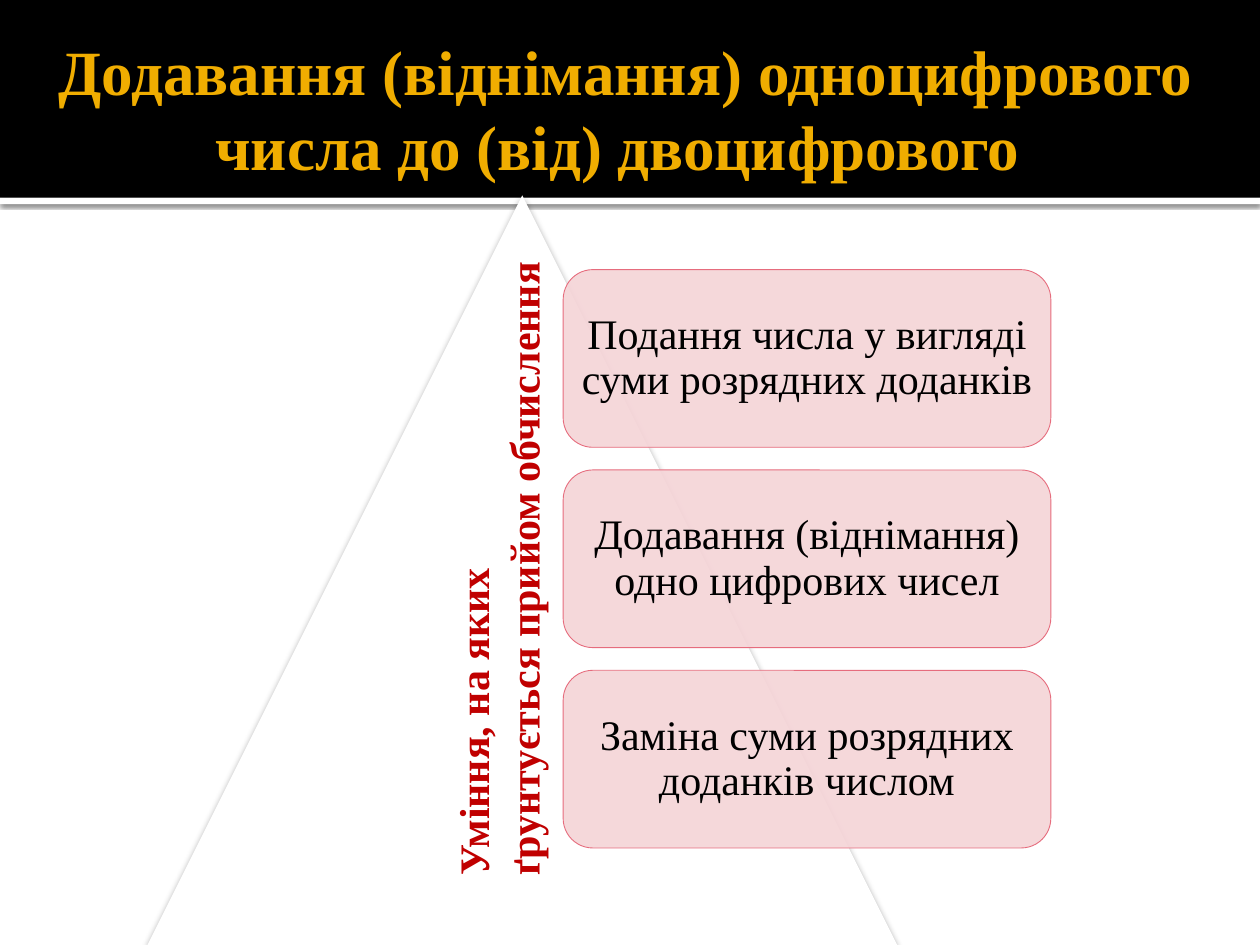
from dataclasses import dataclass
from typing import Optional

from lxml.etree import SubElement
from pptx import Presentation
from pptx.dml.color import RGBColor
from pptx.enum.shapes import MSO_SHAPE
from pptx.enum.text import MSO_ANCHOR, PP_ALIGN
from pptx.oxml.ns import qn
from pptx.util import Inches, Pt

COLORS = {
    "white": "FFFFFF",
    "black": "000000",
    "gold": "F0AD00",
    "pink": "F5D4D7",
    "rose": "E66C7D",
    "red": "C00000",
}
FONT = "Times New Roman"


@dataclass
class Shadow:
    alpha: int
    blur: float
    dist: float


@dataclass
class Box:
    x: float
    y: float
    w: float
    h: float
    fill: str
    kind: MSO_SHAPE = MSO_SHAPE.RECTANGLE
    line: Optional[str] = None
    alpha: Optional[int] = None
    shadow: Optional[Shadow] = None


def rgb(name: str) -> RGBColor:
    return RGBColor.from_string(COLORS[name])


def add_alpha(clr, percent: int) -> None:
    SubElement(clr, qn("a:alpha"), val=str(percent * 1000))


def add_box(s, b: Box):
    sp = s.shapes.add_shape(b.kind, Inches(b.x), Inches(b.y), Inches(b.w), Inches(b.h))
    sp.shadow.inherit = False
    sp.fill.solid()
    sp.fill.fore_color.rgb = rgb(b.fill)
    if b.alpha:
        add_alpha(sp.element.spPr.find(".//" + qn("a:srgbClr")), b.alpha)
    if b.line:
        sp.line.color.rgb = rgb(b.line)
        sp.line.width = Pt(0.5)
    else:
        sp.line.fill.background()
    if b.shadow:
        effects = sp.element.spPr.find(qn("a:effectLst"))
        outer = SubElement(
            effects, qn("a:outerShdw"), blurRad=str(Pt(b.shadow.blur)),
            dist=str(Pt(b.shadow.dist)), dir="5400000", algn="t", rotWithShape="0",
        )
        add_alpha(SubElement(outer, qn("a:srgbClr"), val=COLORS["black"]), b.shadow.alpha)
    return sp


def add_textbox(s, x: float, y: float, w: float, h: float):
    return s.shapes.add_textbox(Inches(x), Inches(y), Inches(w), Inches(h))


def set_text(sp, lines: list[str], color: str, font: dict, frame: dict, para: dict) -> None:
    tf = sp.text_frame
    for name, value in {"word_wrap": True, **frame}.items():
        setattr(tf, name, value)
    for i, line in enumerate(lines):
        p = tf.add_paragraph() if i else tf.paragraphs[0]
        for name, value in para.items():
            setattr(p, name, value)
        r = p.add_run()
        r.text = line
        for name, value in {"name": FONT, **font}.items():
            setattr(r.font, name, value)
        r.font.color.rgb = rgb(color)


def main() -> None:
    prs = Presentation()
    prs.slide_width, prs.slide_height = Inches(10), Inches(7.5)
    s = prs.slides.add_slide(prs.slide_layouts[6])

    add_box(s, Box(0, 1.57, 10, 0.05, "white", shadow=Shadow(60, 2.5, 0.8)))
    add_box(s, Box(0, 0, 10, 1.57, "black"))

    title = add_textbox(s, 0.19, 0.17, 9.5, 1.37)
    set_text(
        title, ["Додавання (віднімання) одноцифрового числа до (від) двоцифрового "], "gold",
        {"size": Pt(36), "bold": True},
        {"vertical_anchor": MSO_ANCHOR.MIDDLE, "margin_right": Inches(0.05)},
        {"alignment": PP_ALIGN.CENTER},
    )

    add_box(s, Box(1.17, 1.55, 5.95, 5.95, "white", MSO_SHAPE.ISOSCELES_TRIANGLE,
                   shadow=Shadow(38, 3.5, 2)))

    skills = [
        "Подання числа у вигляді суми розрядних доданків",
        "Додавання (віднімання) одно цифрових чисел",
        "Заміна суми розрядних доданків числом",
    ]
    margins = {f"margin_{side}": Inches(0.03) for side in ("left", "top", "right", "bottom")}
    for i, skill in enumerate(skills):
        card = add_box(s, Box(4.47, 2.14 + 1.59 * i, 3.87, 1.41, "pink",
                              MSO_SHAPE.ROUNDED_RECTANGLE, "rose", 90))
        set_text(
            card, [skill], "black", {"size": Pt(24)},
            {"vertical_anchor": MSO_ANCHOR.MIDDLE, **margins},
            {"alignment": PP_ALIGN.CENTER, "line_spacing": 0.9},
        )

    label = add_textbox(s, 3.5, 1.87, 1.01, 5.18)
    set_text(
        label, ["Уміння, на яких", "ґрунтується прийом обчислення"], "red",
        {"size": Pt(24), "bold": True}, {}, {},
    )
    label.text_frame._txBody.bodyPr.set("vert", "vert270")

    prs.save("out.pptx")


if __name__ == "__main__":
    main()
